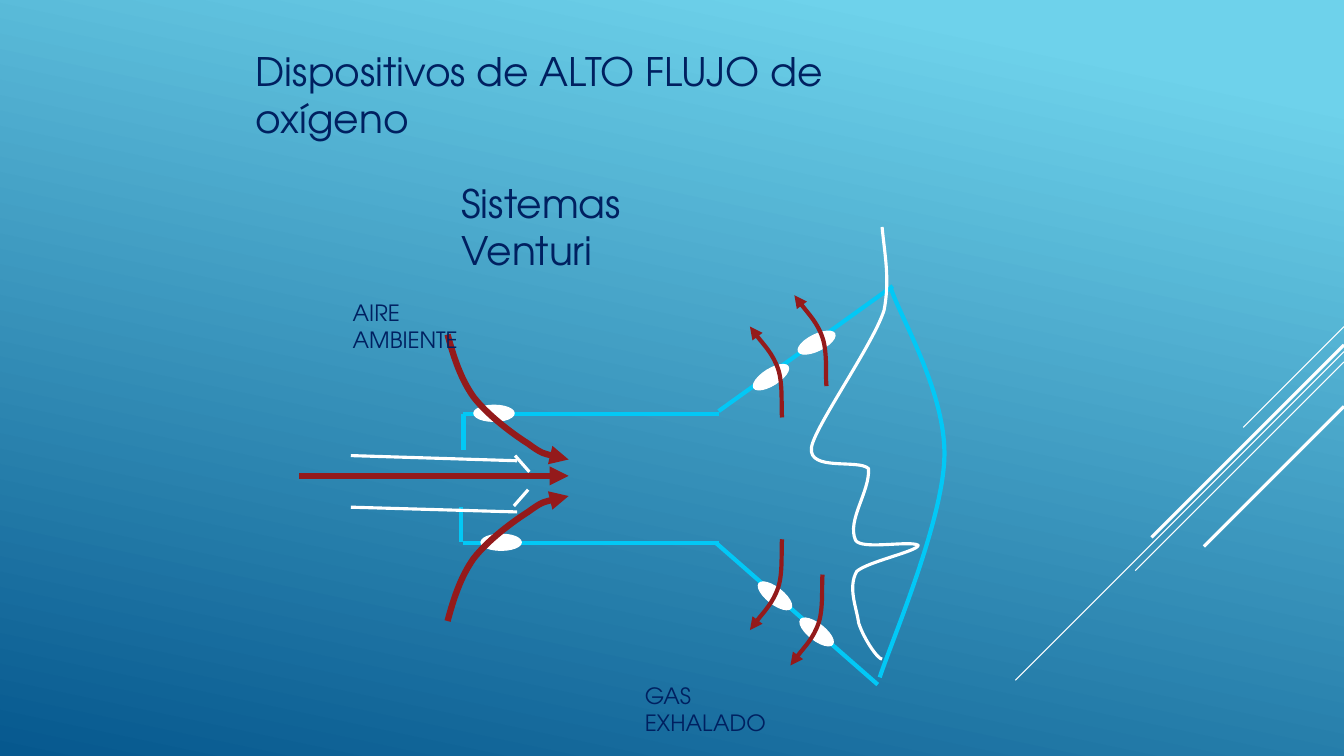
from dataclasses import dataclass

from lxml import etree
from pptx import Presentation
from pptx.dml.color import RGBColor
from pptx.enum.shapes import MSO_CONNECTOR, MSO_SHAPE
from pptx.enum.text import MSO_AUTO_SIZE
from pptx.oxml.ns import qn
from pptx.util import Cm, Pt

STRAIGHT = MSO_CONNECTOR.STRAIGHT
OVAL = MSO_SHAPE.OVAL
FIT = MSO_AUTO_SIZE.SHAPE_TO_FIT_TEXT


@dataclass(frozen=True)
class Theme:
    font: str = "TeX Gyre Adventor"
    navy: str = "002060"
    white: str = "FFFFFF"
    cyan: str = "02C8F6"
    red: str = "941A1B"
    light: str = "6ED2EB"
    deep: str = "06588E"
    head: int = 28
    label: int = 16
    hair: float = 0.75
    thin: float = 2.25
    mid: float = 3
    bold: float = 4.5


T = Theme()
WIDE, HIGH = 33.87, 19.05

# All coordinates are centimetres
# Corner rays: start height at the right edge, run at 45 degrees, weight
RAYS = [(8.23, 2.54, T.hair), (8.86, 8.28, T.hair), (9.12, 5.26, T.hair),
        (8.69, 4.85, T.thin), (10.24, 3.53, T.thin)]

# Mask body: walls, end pieces and sloping sides
BODY = [(11.68, 10.44, 18.11, 10.44), (11.68, 13.69, 18.11, 13.69),
        (11.68, 10.44, 11.68, 11.35), (11.61, 12.78, 11.61, 13.67),
        (18.11, 10.36, 22.5, 7.21), (18.03, 13.67, 22.12, 17.25)]

# Oxygen inlet: two pipe walls and the nozzle tips
INLET = [(8.84, 11.48, 13.03, 11.61), (8.84, 12.78, 13.03, 12.9),
         (12.98, 11.48, 13.34, 11.89), (12.95, 12.75, 13.31, 12.34)]

# Openings: left, top, rotation
HOLES = [(11.94, 10.21, 0), (12.12, 13.46, 0), (20.07, 15.72, 37.8),
         (20.07, 8.43, 333.8), (19.02, 14.81, 37.8), (18.92, 9.3, 327.9)]
HOLE_W, HOLE_H = 1.02, 0.41

# Curves: a start, then three points for each Bezier piece
RIM = [(22.45, 7.26), (22.68, 7.98), (23.85, 9.91), (23.8, 11.53),
       (23.75, 13.18), (22.45, 16.21), (22.17, 17.07)]
FACE = [(22.23, 5.72),
        (22.3, 6.45), (22.43, 7.04), (22.28, 7.82),
        (22, 8.69), (20.52, 10.77), (20.45, 11.28),
        (20.37, 11.89), (21.64, 11.56), (21.89, 11.81),
        (21.92, 12.4), (21.34, 13.11), (21.56, 13.61),
        (21.69, 13.87), (22.94, 13.61), (23.14, 13.74),
        (23.14, 13.89), (21.87, 14.15), (21.59, 14.4),
        (21.36, 14.81), (21.59, 15.32), (21.64, 15.7),
        (21.77, 16.1), (22.12, 16.61), (22.23, 16.61)]
AIR = [(11.28, 8.43), (11.43, 8.99), (11.61, 9.55), (11.94, 10.01),
       (12.29, 10.46), (12.9, 10.92), (13.31, 11.18),
       (13.69, 11.46), (14, 11.51), (14.33, 11.58)]
AXIS = 12.04

# Exhaled gas: one bend, placed at each start, going up (-1) or down (1)
BEND = [(0, 0), (-0.03, 0.2), (0.03, 0.84), (-0.1, 1.22),
        (-0.23, 1.6), (-0.66, 2.06), (-0.81, 2.29)]
VENTS = [(20.83, 9.73, -1), (19.71, 10.52, -1),
         (19.71, 13.59, 1), (20.73, 14.48, 1)]

# Texts: words, left, top, width, height, size
TEXTS = [("Sistemas Venturi", 11.38, 4.39, 7.47, 1.45, T.head),
         ("Dispositivos de ALTO FLUJO de oxígeno", 6.2, 1.07, 16.18, 1.45, T.head),
         ("AIRE AMBIENTE", 8.64, 7.42, 4.19, 0.94, T.label),
         ("GAS EXHALADO", 16, 17.07, 4.17, 0.94, T.label)]


def rgb(tint):
    return RGBColor.from_string(tint)


def pen(item, tint, weight, arrow=False):
    item.line.color.rgb = rgb(tint)
    item.line.width = Pt(weight)
    if arrow:
        ln = item._element.spPr.find(qn("a:ln"))
        etree.SubElement(ln, qn("a:tailEnd"), type="triangle")


def line(slide, ends, tint, weight, arrow=False):
    item = slide.shapes.add_connector(STRAIGHT, *map(Cm, ends))
    pen(item, tint, weight, arrow)
    etree.SubElement(item._element.spPr, qn("a:effectLst"))


def curve(slide, points, tint, weight, arrow=False):
    start, *rest = [(Cm(x), Cm(y)) for x, y in points]
    draft = slide.shapes.build_freeform(*start)
    draft.add_line_segments(rest, close=False)
    item = draft.convert_to_shape()
    item.shadow.inherit = False
    item.fill.background()
    pen(item, tint, weight, arrow)
    # Every three straight steps become one Bezier piece
    trail = item._element.find(".//" + qn("a:path"))
    steps = trail.findall(qn("a:lnTo"))
    for i in range(0, len(steps), 3):
        piece = etree.SubElement(trail, qn("a:cubicBezTo"))
        for step in steps[i:i + 3]:
            piece.append(step[0])
            trail.remove(step)


def hole(slide, left, top, turn):
    item = slide.shapes.add_shape(OVAL, Cm(left), Cm(top), Cm(HOLE_W), Cm(HOLE_H))
    item.shadow.inherit = False
    item.rotation = turn
    item.fill.solid()
    item.fill.fore_color.rgb = rgb(T.white)
    pen(item, T.white, T.hair)


def text(slide, words, left, top, width, height, size):
    box = slide.shapes.add_textbox(Cm(left), Cm(top), Cm(width), Cm(height))
    frame = box.text_frame
    frame.word_wrap = True
    frame.auto_size = FIT
    run = frame.paragraphs[0].add_run()
    run.text = words
    run.font.name = T.font
    run.font.size = Pt(size)
    run.font.color.rgb = rgb(T.navy)


def paint(slide):
    fill = slide.background.fill
    fill.gradient()
    fill.gradient_angle = 258
    for stop, place, tint in zip(fill.gradient_stops, (0.1, 1), (T.light, T.deep)):
        stop.position = place
        stop.color.rgb = rgb(tint)


def main():
    deck = Presentation()
    deck.slide_width, deck.slide_height = Cm(WIDE), Cm(HIGH)
    slide = deck.slides.add_slide(deck.slide_layouts[6])

    # Backdrop
    paint(slide)
    for top, run, weight in RAYS:
        line(slide, (WIDE, top, WIDE - run, top + run), T.white, weight)

    # Mask, face and inlet
    for ends in BODY:
        line(slide, ends, T.cyan, T.mid)
    curve(slide, RIM, T.cyan, T.mid)
    for spot in HOLES:
        hole(slide, *spot)
    curve(slide, FACE, T.white, T.thin)
    for ends in INLET:
        line(slide, ends, T.white, T.thin)

    # Oxygen and room air going in
    line(slide, (7.54, 11.99, 14.33, 11.99), T.red, T.bold, True)
    curve(slide, AIR, T.red, T.bold, True)
    curve(slide, [(x, 2 * AXIS - y) for x, y in AIR], T.red, T.bold, True)

    # Exhaled gas going out
    for left, top, way in VENTS:
        bend = [(left + x, top + way * y) for x, y in BEND]
        curve(slide, bend, T.red, T.mid, True)

    # Wording
    for row in TEXTS:
        text(slide, *row)

    deck.save("out.pptx")


if __name__ == "__main__":
    main()
